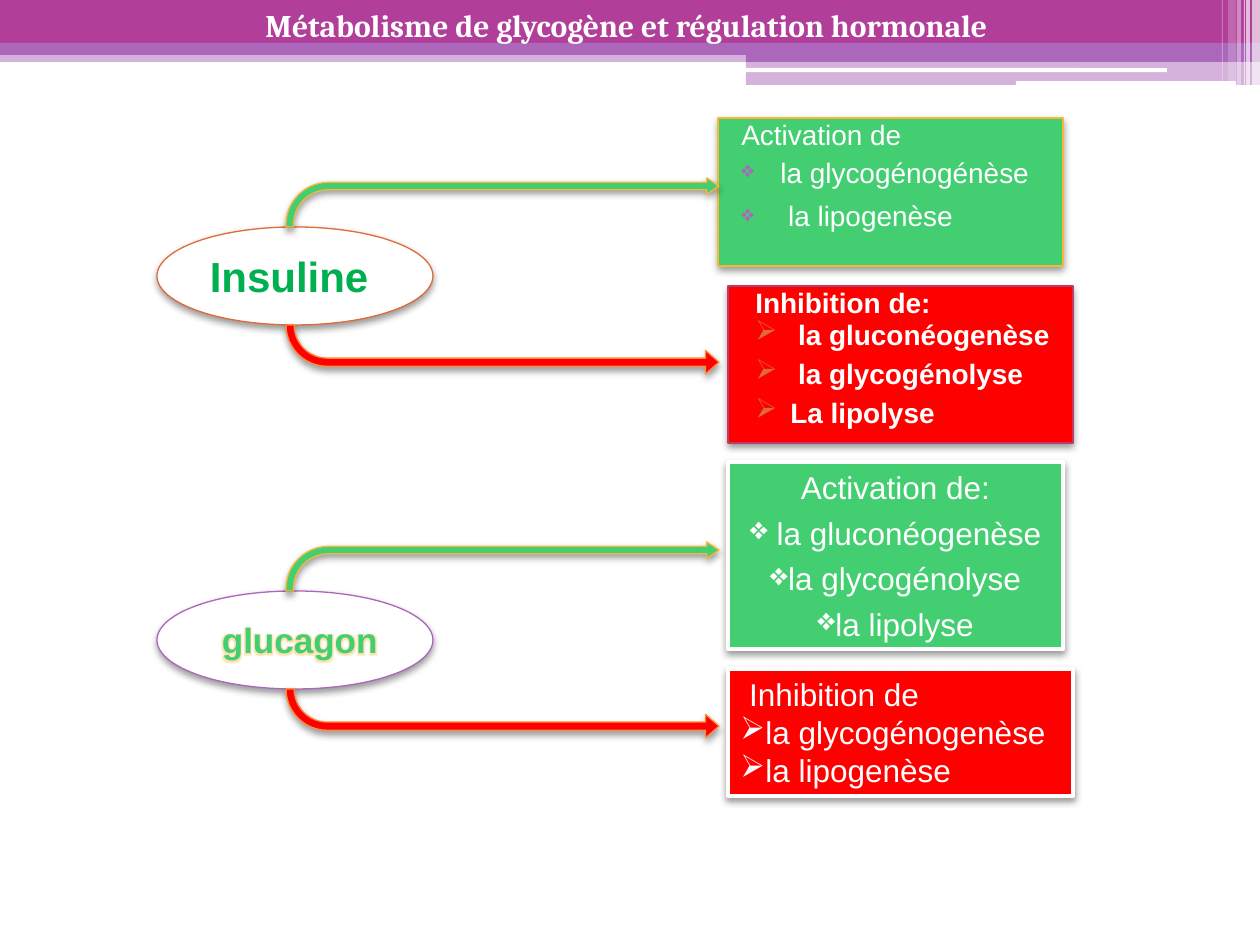
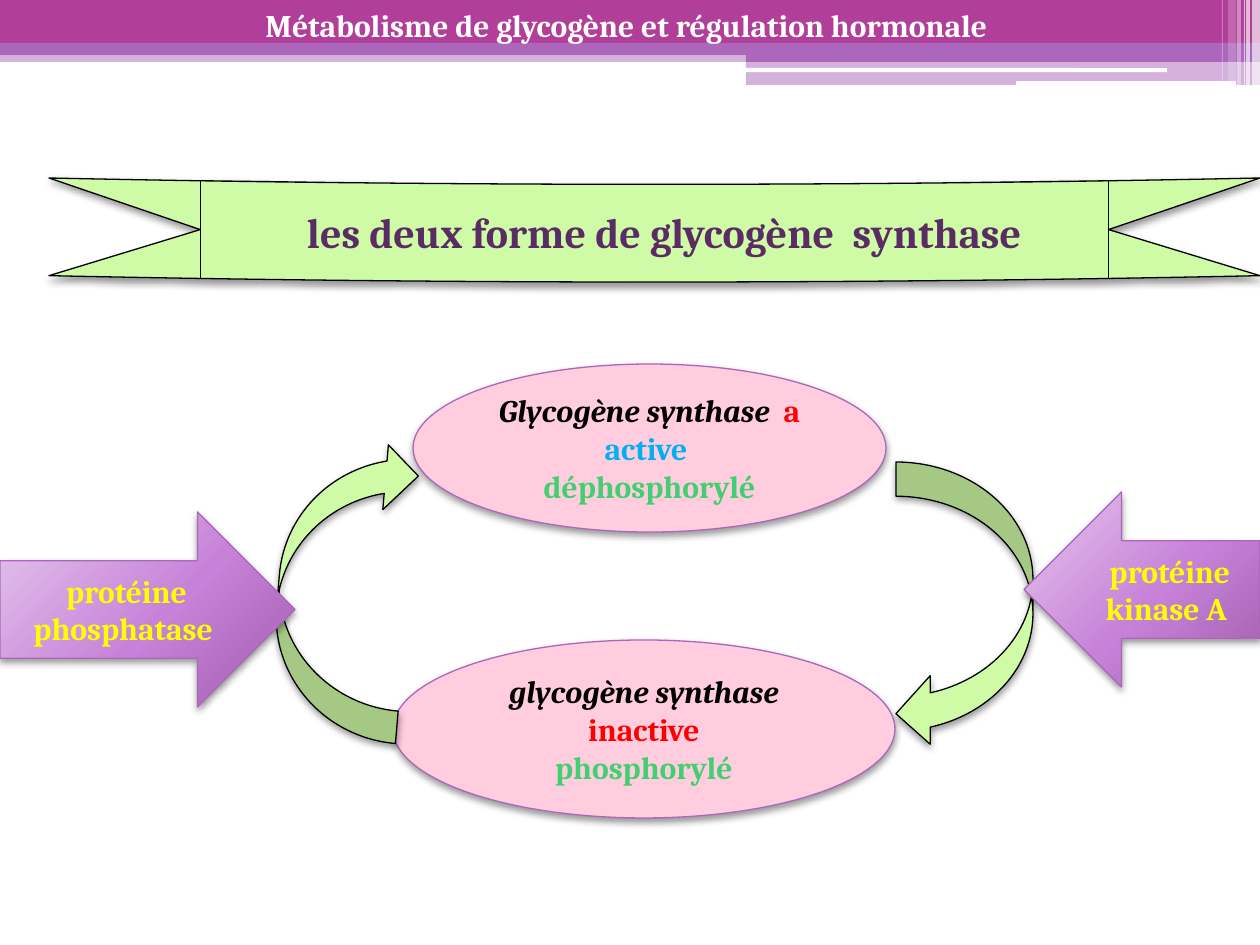
from dataclasses import dataclass

from pptx import Presentation
from pptx import util as u
from pptx.dml.color import RGBColor
from pptx.enum import shapes, text
from pptx.oxml import parse_xml
from pptx.oxml.ns import nsdecls, qn

EMU_PER_PX = 914400 / 126
W, H = 1260, 945
MSO = shapes.MSO_SHAPE
CENTER, LEFT = text.PP_ALIGN.CENTER, text.PP_ALIGN.LEFT
MIDDLE, TOP = text.MSO_ANCHOR.MIDDLE, text.MSO_ANCHOR.TOP
TITLE = "Métabolisme de glycogène et régulation hormonale "

C = {
    "white": "FFFFFF", "black": "000000", "magenta": "B13F9A", "violet": "AC66BB",
    "orange": "DE6C36", "amber": "F9B639", "tangerine": "FA8D3D", "rose": "B83D68",
    "green": "44CE72", "insulin": "00B050", "red": "FF0000", "pink": "FFCDDD",
    "lime": "CFFBA7", "blue": "00B0F0", "yellow": "FFFF00", "plum": "5A2C64",
}
ENZYME_STOPS = [(0, "E4C8EC"), (55, "C781D8"), (100, "A05FAE")]


@dataclass
class Para:
    """One paragraph: runs are (text, colour) or (text, colour, italic)."""
    runs: list
    bullet: str = ""
    bullet_color: str = ""
    bullet_size: int = 100
    before: float = 0
    spacing: float = 1.0
    margin: int = 0
    indent: int = 0


def px(n):
    return u.Emu(round(n * EMU_PER_PX))


def rgb(name):
    return RGBColor.from_string(C[name])


def xml(tag, body="", **attrs):
    values = "".join(f' {k}="{v}"' for k, v in attrs.items())
    return parse_xml(f'<a:{tag} {nsdecls("a")}{values}>{body}</a:{tag}>')


def add_shape(slide, kind, box, fill, line=None, width=0.75, opacity=100, adj=(),
              shadow=True, flip=False, rotation=0):
    s = slide.shapes.add_shape(kind, *map(px, box))
    for i, value in enumerate(adj):
        s.adjustments[i] = value
    s.rotation = rotation
    s.fill.solid()
    s.fill.fore_color.rgb = rgb(fill)
    sp_pr = s._element.spPr
    if opacity < 100:
        color = sp_pr.find(qn("a:solidFill"))[0]
        color.append(xml("alpha", val=opacity * 1000))
    if line:
        s.line.color.rgb = rgb(line)
        s.line.width = u.Pt(width)
    else:
        s.line.fill.background()
    s.shadow.inherit = False
    if shadow:
        color = f'<a:srgbClr val="{C["black"]}"><a:alpha val="40000"/></a:srgbClr>'
        sp_pr.find(qn("a:effectLst")).append(
            xml("outerShdw", color, blurRad=u.Pt(4.1), dist=u.Pt(2),
                dir=5400000, rotWithShape=0))
    if flip:
        sp_pr.find(qn("a:xfrm")).set("flipV", "1")
    return s


def add_bullet(p, para):
    p_pr = p._p.get_or_add_pPr()
    p_pr.set("marL", str(px(para.margin)))
    p_pr.set("indent", str(px(para.indent)))
    if not para.bullet:
        p_pr.append(xml("buNone"))
        return
    if para.bullet_color:
        p_pr.append(xml("buClr", f'<a:srgbClr val="{C[para.bullet_color]}"/>'))
    p_pr.append(xml("buSzPct", val=para.bullet_size * 1000))
    p_pr.append(xml("buChar", char=para.bullet))


def write(s, paras, size=18, font="Cambria", bold=True, align=CENTER, anchor=MIDDLE):
    tf = s.text_frame
    tf.word_wrap = True
    tf.vertical_anchor = anchor
    for i, para in enumerate(paras):
        p = tf.add_paragraph() if i else tf.paragraphs[0]
        p.alignment = align
        add_bullet(p, para)
        p.line_spacing = para.spacing
        if i:
            p.space_before = u.Pt(para.before)
        p.font.size, p.font.name, p.font.bold = u.Pt(size), font, bold
        for words, color, *italic in para.runs:
            r = p.add_run()
            r.text = words
            r.font.color.rgb = rgb(color)
            if italic:
                r.font.italic = italic[0]


def add_glow(s):
    color = f'<a:srgbClr val="{C["amber"]}"><a:alpha val="40000"/></a:srgbClr>'
    r = s.text_frame.paragraphs[0].runs[0]
    r._r.get_or_add_rPr().append(
        xml("effectLst", f'<a:glow rad="{u.Pt(5)}">{color}</a:glow>'))


def add_header(slide):
    bands = [((0, 50, W, 12), 50, "violet"), ((0, 0, W, 43), 100, "magenta"),
             ((0, 43, W, 12), 100, "violet"), ((746, 49, 514, 13), 100, "violet"),
             ((746, 61, 514, 24), 50, "violet")]
    strips = [(1252, 8, 85, 65), (1246, 4, 85, 65), (1244, 1, 85, 60),
              (1237, 4, 85, 40), (1228, 8, 81, 20), (1222, 1, 81, 30)]
    for box, opacity, color in bands:
        add_shape(slide, MSO.RECTANGLE, box, color, opacity=opacity, shadow=False)
    for box in ((745, 68, 422, 4), (1016, 81, 220, 5)):
        add_shape(slide, MSO.ROUNDED_RECTANGLE, box, "white", adj=[0.17], shadow=False)
    for x, width, height, opacity in strips:
        add_shape(slide, MSO.RECTANGLE, (x, 0, width, height), "white",
                  opacity=opacity, shadow=False)


def add_title(slide):
    write(slide.shapes.add_textbox(0, 0, px(W), px(50)),
          [Para([(TITLE, "white")])], anchor=TOP)


def add_hormone(slide, y, line, label, color, size):
    """Draw a hormone with its activation and inhibition arrows."""
    s = add_shape(slide, MSO.OVAL, (157, y, 276, 98), "white", line)
    write(s, [Para([(label, color)])], size, "Arial")
    add_shape(slide, MSO.BENT_ARROW, (286, y - 49, 433, 49), "green", "amber",
              adj=[0.152, 0.166, 0.25, 0.863])
    add_shape(slide, MSO.BENT_ARROW, (286, y + 98, 433, 49), "red", "tangerine",
              adj=[0.167, 0.24, 0.275, 0.843], flip=True)
    return s


def add_effects(slide, box, fill, line, paras, width=0.75, size=18, bold=False,
                align=LEFT):
    s = add_shape(slide, MSO.RECTANGLE, box, fill, line, width)
    write(s, paras, size, "Arial", bold, align, TOP)


def bulleted(heading, items, bullet, spacings=None, **style):
    """Return a heading and its bulleted items as white paragraphs."""
    spacings = spacings or [1.0] * (len(items) + 1)
    place = {k: style[k] for k in ("margin", "indent") if k in style}
    return [Para([(heading, "white")], spacing=spacings[0], **place)] + [
        Para([(item, "white")], bullet, spacing=spacing, **style)
        for item, spacing in zip(items, spacings[1:])]


def add_enzyme_arrow(slide, kind, box, label):
    s = add_shape(slide, kind, box, "violet", "violet")
    stops = "".join(f'<a:gs pos="{pos * 1000}"><a:srgbClr val="{color}"/></a:gs>'
                    for pos, color in ENZYME_STOPS)
    focus = '<a:fillToRect l="-40000" t="-90000" r="140000" b="190000"/>'
    sp_pr = s._element.spPr
    sp_pr.replace(sp_pr.find(qn("a:solidFill")),
                  xml("gradFill", f'<a:gsLst>{stops}</a:gsLst>'
                                  f'<a:path path="circle">{focus}</a:path>'))
    write(s, [Para([(label, "yellow")])])


def add_synthase(slide, box, state_runs, phosphorylation):
    s = add_shape(slide, MSO.OVAL, box, "pink", "violet")
    write(s, [Para(state_runs), Para([(phosphorylation, "green")])])


def build_hormones(slide):
    add_header(slide)
    add_effects(slide, (728, 286, 345, 157), "red", "rose", bulleted(
        "Inhibition de:", [" la gluconéogenèse", " la glycogénolyse", "La lipolyse"],
        "➢", [0.8, 0.8, 1.0, 1.0], bullet_color="orange", before=3,
        margin=50, indent=-35), size=16, bold=True)
    add_effects(slide, (718, 118, 345, 148), "green", "amber", bulleted(
        "Activation de", ["la glycogénogénèse", " la lipogenèse"],
        "❖", [0.8, 0.8, 1.0], bullet_color="violet", bullet_size=80, before=6,
        margin=50, indent=-39), size=16)
    add_hormone(slide, 227, "orange", "Insuline ", "insulin", 24)
    add_title(slide)
    add_effects(slide, (728, 669, 345, 127), "red", "white", bulleted(
        " Inhibition de", ["la glycogénogenèse", "la lipogenèse"], "➢"), width=2.5)
    add_effects(slide, (728, 462, 335, 187), "green", "white", bulleted(
        "Activation de:", [" la gluconéogenèse", "la glycogénolyse", "la lipolyse"],
        "❖", before=4.4), width=2.5, align=CENTER)
    add_glow(add_hormone(slide, 591, "violet", " glucagon ", "green", 20))


def build_synthase(slide):
    add_header(slide)
    add_synthase(slide, (413, 364, 473, 168),
                 [("Glycogène synthase  ", "black", True), ("a ", "red"),
                  ("active ", "blue")], "déphosphorylé")
    add_shape(slide, MSO.CURVED_LEFT_ARROW, (896, 462, 137, 286), "lime", "black")
    add_synthase(slide, (393, 640, 502, 178),
                 [("glycogène synthase ", "black", True), ("inactive", "red")],
                 "phosphorylé")
    add_shape(slide, MSO.CURVED_DOWN_ARROW, (193, 523, 301, 130), "lime", "black",
              rotation=274.9)
    add_enzyme_arrow(slide, MSO.LEFT_ARROW, (1024, 492, 236, 195), " protéine kinase A")
    add_enzyme_arrow(slide, MSO.RIGHT_ARROW, (0, 512, 295, 195), " protéine phosphatase")
    s = add_shape(slide, MSO.CURVED_DOWN_RIBBON, (49, 178, 1211, 104), "lime", "black",
                  adj=[0.061, 0.75, 0.061])
    write(s, [Para([("les deux forme de glycogène  synthase", "plum")], margin=19)], 24)
    add_title(slide)


def main():
    prs = Presentation()
    prs.slide_width, prs.slide_height = px(W), px(H)
    for build in (build_hormones, build_synthase):
        build(prs.slides.add_slide(prs.slide_layouts[6]))
    prs.save("out.pptx")


if __name__ == "__main__":
    main()
